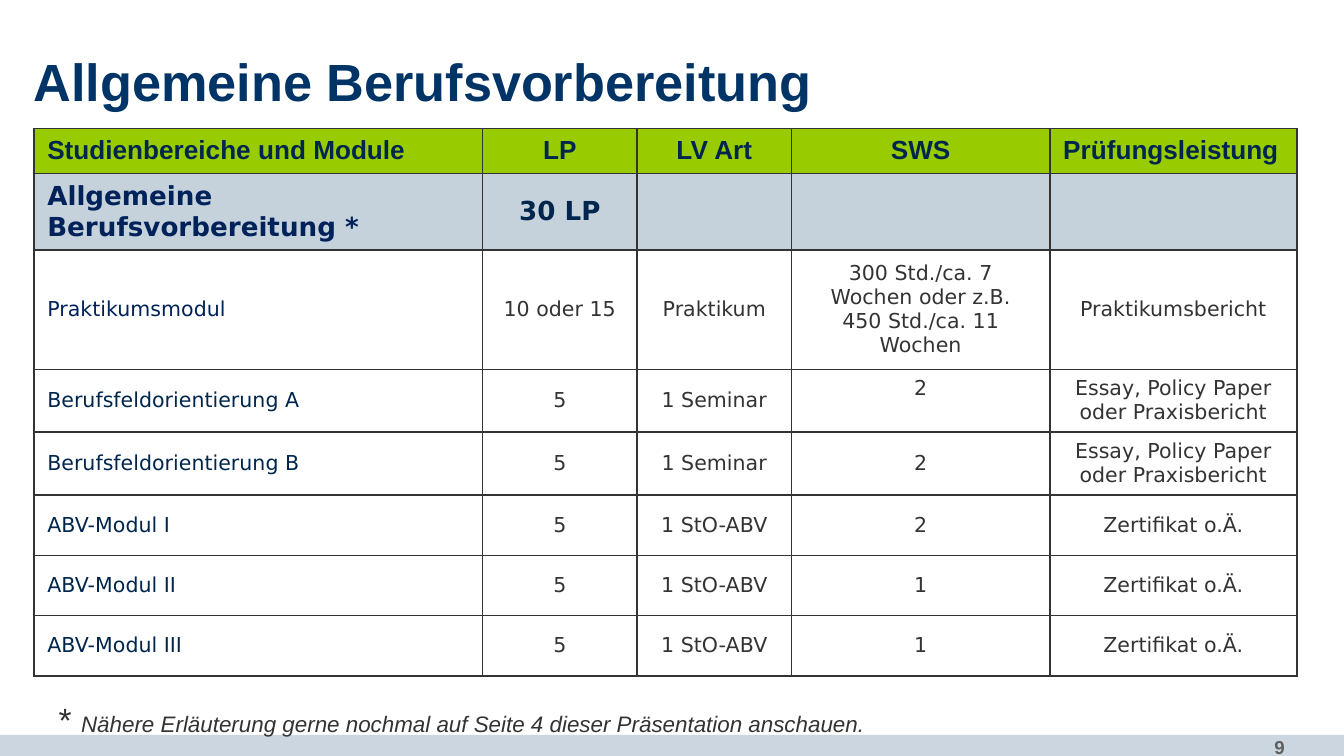
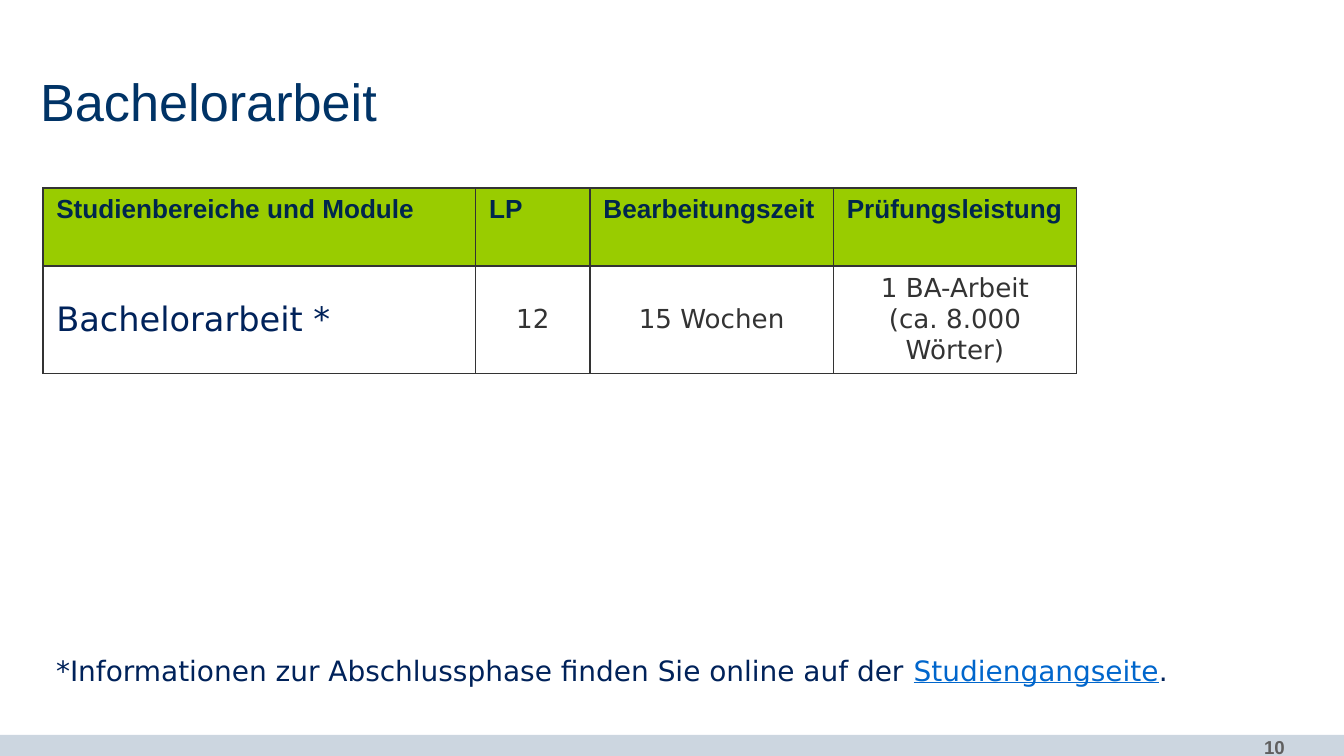
import pptx
import pptx.dml.color
import pptx.enum.shapes
import pptx.enum.text
import pptx.oxml
import pptx.oxml.ns
import pptx.util

Cm = pptx.util.Cm
Pt = pptx.util.Pt
RGBColor = pptx.dml.color.RGBColor
ALIGN = pptx.enum.text.PP_ALIGN
ANCHOR = pptx.enum.text.MSO_ANCHOR

TITLE_BLUE = RGBColor(0x00, 0x33, 0x66)
NAVY = RGBColor(0x00, 0x26, 0x4D)
DEEP_BLUE = RGBColor(0x00, 0x22, 0x5A)
LINK_BLUE = RGBColor(0x00, 0x66, 0xCC)
DARK_GREY = RGBColor(0x33, 0x33, 0x33)
PAGE_GREY = RGBColor(0x5F, 0x5F, 0x5F)
BAND = RGBColor(0xCC, 0xD6, 0xE0)
GREEN = RGBColor(0x99, 0xCC, 0x00)
AREA_FILL = RGBColor(0xC5, 0xD1, 0xDB)
WHITE = RGBColor(0xFF, 0xFF, 0xFF)
HEAD_FONT = "Arial"
BODY_FONT = "DejaVu Sans"


def format_text(frame, font, size, color, bold=False, align=ALIGN.LEFT):
    for paragraph in frame.paragraphs:
        paragraph.alignment = align
        for run in paragraph.runs:
            run.font.name = font
            run.font.size = Pt(size)
            run.font.color.rgb = color
            run.font.bold = bold


def add_module_table(slide, left, top, widths, heights, rows):
    """Add a table with white cells and thin grey borders on every side."""
    table = slide.shapes.add_table(
        len(rows), len(widths), Cm(left), Cm(top),
        Cm(sum(widths)), Cm(sum(heights))).table
    for column, width in zip(table.columns, widths):
        column.width = Cm(width)
    for row, height, texts in zip(table.rows, heights, rows):
        row.height = Cm(height)
        for cell, text in zip(row.cells, texts):
            cell.text_frame.text = text
            cell.vertical_anchor = ANCHOR.MIDDLE
            cell.fill.solid()
            cell.fill.fore_color.rgb = WHITE
            properties = cell._tc.get_or_add_tcPr()
            for position, side in enumerate("LRTB"):
                properties.insert(position, pptx.oxml.parse_xml(
                    f'<a:ln{side} {pptx.oxml.ns.nsdecls("a")} w="12700"><a:solidFill>'
                    f'<a:srgbClr val="{DARK_GREY}"/></a:solidFill></a:ln{side}>'))
    for cell in table.rows[0].cells:
        cell.vertical_anchor = ANCHOR.TOP
        cell.fill.fore_color.rgb = GREEN
        format_text(cell.text_frame, HEAD_FONT, 14, NAVY, bold=True)
    return table


deck = pptx.Presentation()
deck.slide_width = Cm(25.4)
deck.slide_height = Cm(14.28)

# Title, footer band and page number of both slides
slides = []
for page, title, title_left, title_top, title_bold in [
    (9, "Allgemeine Berufsvorbereitung", 0.64, 1.22, True),
    (10, "Bachelorarbeit", 0.76, 1.6, False),
]:
    slide = deck.slides.add_slide(deck.slide_layouts[6])
    slides.append(slide)

    band = slide.shapes.add_shape(
        pptx.enum.shapes.MSO_SHAPE.RECTANGLE, 0, Cm(13.88), deck.slide_width, Cm(0.4))
    band.shadow.inherit = False
    band.fill.solid()
    band.fill.fore_color.rgb = BAND
    band.line.fill.background()

    number = slide.shapes.add_textbox(Cm(21.13), Cm(13.77), Cm(3.4), Cm(0.51)).text_frame
    number.word_wrap = True
    number.text = str(page)
    format_text(number, HEAD_FONT, 10, PAGE_GREY, bold=True, align=ALIGN.RIGHT)

    heading = slide.shapes.add_textbox(
        Cm(title_left), Cm(title_top), Cm(24), Cm(0.89)).text_frame
    heading.word_wrap = True
    heading.margin_left = heading.margin_right = 0
    heading.margin_top = heading.margin_bottom = 0
    heading.vertical_anchor = ANCHOR.BOTTOM
    heading.text = title
    format_text(heading, HEAD_FONT, 28, TITLE_BLUE, bold=title_bold)

preparation_slide, thesis_slide = slides

# Allgemeine Berufsvorbereitung
modules = add_module_table(
    preparation_slide, 0.64, 2.43,
    [8.48, 2.92, 2.92, 4.88, 4.67],
    [0.79, 1.37, 2.26] + [1.14] * 5,
    [
        ("Studienbereiche und Module", "LP", "LV Art", "SWS", "Prüfungsleistung"),
        ("Allgemeine Berufsvorbereitung *", "30 LP", "", "", ""),
        ("Praktikumsmodul", "10 oder 15", "Praktikum",
         "300 Std./ca. 7 Wochen oder z.B.\n450 Std./ca. 11 Wochen", "Praktikumsbericht"),
        ("Berufsfeldorientierung A", "5", "1 Seminar", "2",
         "Essay, Policy Paper oder Praxisbericht"),
        ("Berufsfeldorientierung B", "5", "1 Seminar", "2",
         "Essay, Policy Paper oder Praxisbericht"),
        ("ABV-Modul I", "5", "1 StO-ABV", "2", "Zertifikat o.Ä."),
        ("ABV-Modul II", "5", "1 StO-ABV", "1", "Zertifikat o.Ä."),
        ("ABV-Modul III", "5", "1 StO-ABV", "1", "Zertifikat o.Ä."),
    ])
for column in (1, 2, 3):
    modules.cell(0, column).text_frame.paragraphs[0].alignment = ALIGN.CENTER
for column, cell in enumerate(modules.rows[1].cells):
    cell.fill.fore_color.rgb = AREA_FILL
    format_text(cell.text_frame, BODY_FONT, 14, NAVY if column else DEEP_BLUE, bold=True,
                align=ALIGN.CENTER if column else ALIGN.LEFT)
for row in range(2, len(modules.rows)):
    module, *details = modules.rows[row].cells
    format_text(module.text_frame, BODY_FONT, 11, DEEP_BLUE if row == 2 else NAVY)
    for cell in details:
        format_text(cell.text_frame, BODY_FONT, 11, DARK_GREY, align=ALIGN.CENTER)
modules.cell(3, 3).vertical_anchor = ANCHOR.TOP

page_hint = preparation_slide.shapes.add_textbox(
    Cm(0.86), Cm(13.08), Cm(20.83), Cm(1.02)).text_frame
page_hint.word_wrap = True
page_hint.text = "* "
explanation = page_hint.paragraphs[0].add_run()
explanation.text = "Nähere Erläuterung gerne nochmal auf Seite 4 dieser Präsentation anschauen."
format_text(page_hint, HEAD_FONT, 18, DARK_GREY)
explanation.font.size = Pt(12)
explanation.font.italic = True

# Bachelorarbeit
thesis = add_module_table(
    thesis_slide, 0.81, 3.55,
    [8.18, 2.16, 4.6, 4.6],
    [1.47, 1.85],
    [
        ("Studienbereiche und Module", "LP", "Bearbeitungszeit", "Prüfungsleistung"),
        ("Bachelorarbeit *", "12", "15 Wochen", "1 BA-Arbeit\n(ca. 8.000 Wörter)"),
    ])
module, *details = thesis.rows[1].cells
format_text(module.text_frame, BODY_FONT, 18, DEEP_BLUE)
for cell in details:
    format_text(cell.text_frame, BODY_FONT, 14, DARK_GREY, align=ALIGN.CENTER)

online_hint = thesis_slide.shapes.add_textbox(
    Cm(0.81), Cm(12.22), Cm(23.65), Cm(0.89)).text_frame
online_hint.word_wrap = True
online_hint.text = "*Informationen zur Abschlussphase finden Sie online auf der "
programme_page = online_hint.paragraphs[0].add_run()
programme_page.text = "Studiengangseite"
online_hint.paragraphs[0].add_run().text = "."
format_text(online_hint, BODY_FONT, 15, DEEP_BLUE)
programme_page.font.color.rgb = LINK_BLUE
programme_page.font.underline = True

deck.save("out.pptx")
